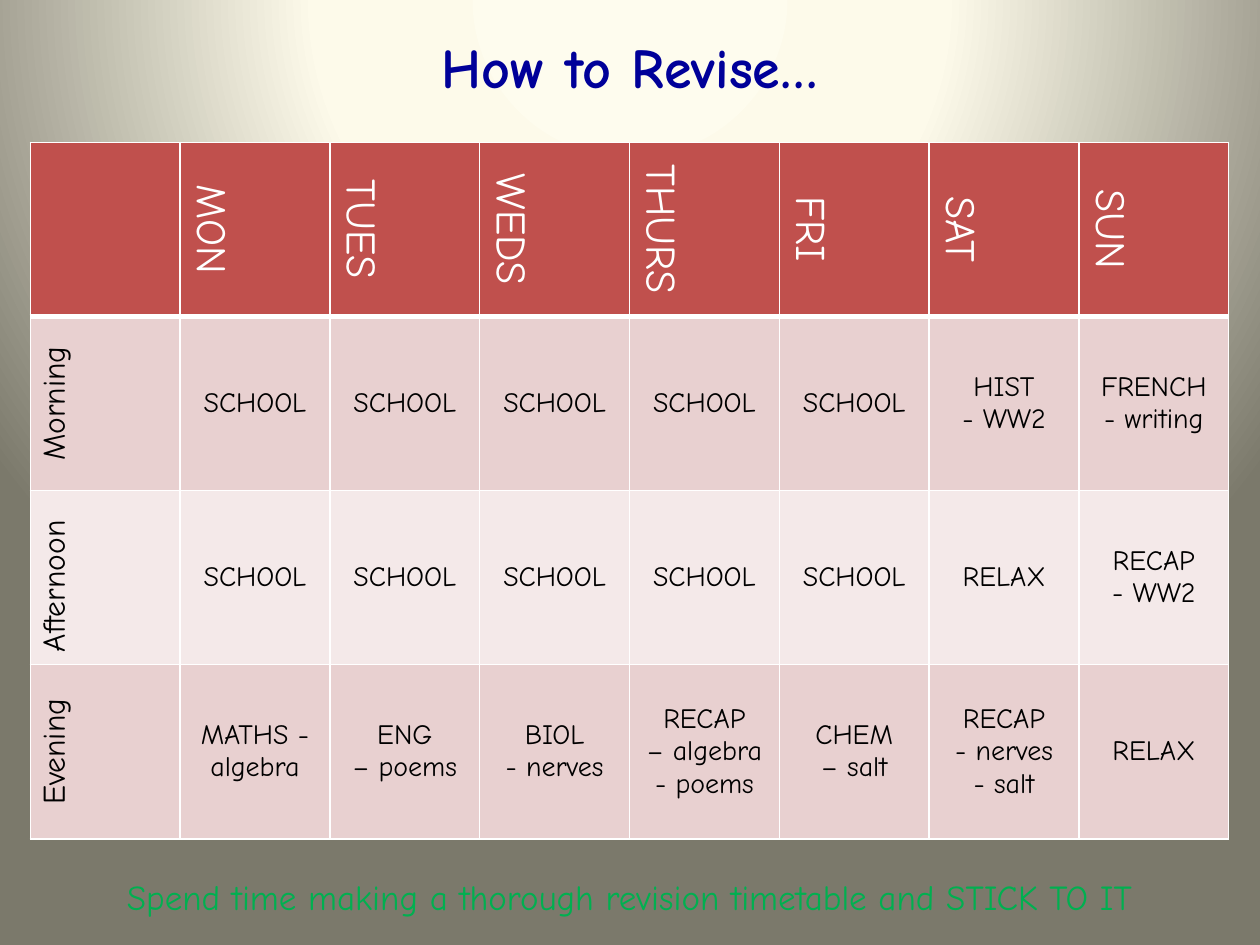
"""Build a one-slide weekly revision timetable."""
from lxml import etree
from pptx import Presentation
from pptx.dml.color import RGBColor
from pptx.enum.text import MSO_ANCHOR, PP_ALIGN
from pptx.oxml.ns import qn
from pptx.util import Cm, Pt

CENTER, LEFT = PP_ALIGN.CENTER, PP_ALIGN.LEFT
MIDDLE = MSO_ANCHOR.MIDDLE
FONT = "Comic Neue"

TITLE = "How to Revise…"
ADVICE = "Spend time making a thorough revision timetable and STICK TO IT"
DAYS = ["", "MON", "TUES", "WEDS", "THURS", "FRI", "SAT", "SUN"]
SCHOOL_WEEK = ["SCHOOL"] * 5
SESSIONS = [
    ["Morning", *SCHOOL_WEEK, "HIST\n- WW2", "FRENCH\n- writing"],
    ["Afternoon", *SCHOOL_WEEK, "RELAX", "RECAP\n- WW2"],
    ["Evening", "MATHS - algebra", "ENG\n– poems", "BIOL\n- nerves",
     "RECAP\n– algebra\n- poems", "CHEM\n– salt",
     "RECAP\n- nerves\n- salt", "RELAX"],
]
HEADER_FILL = "C0504D"
BAND_FILLS = ["E8D0D0", "F4E9E9"]
BACKDROP_STOPS = [(0, "FEFCEE"), (40, "FDFAEA"), (100, "7B796B")]
BACKDROP_FOCUS = {"l": 50, "t": -80, "r": 50, "b": 180}
COLUMN_WIDTH, ROW_HEIGHT = 3.02, 3.51


def rgb(value):
    return RGBColor.from_string(value)


def add_node(parent, tag, **attributes):
    return etree.SubElement(parent, qn(tag), {k: str(v) for k, v in attributes.items()})


def style_text(frame, text, size, color, align=CENTER, bold=False):
    frame.text = text
    for paragraph in frame.paragraphs:
        paragraph.alignment = align
        font = paragraph.font
        font.name, font.size, font.bold = FONT, Pt(size), bold
        font.color.rgb = rgb(color)


def add_caption(slide, box, text, size, color, bold=False):
    frame = slide.shapes.add_textbox(*map(Cm, box)).text_frame
    frame.word_wrap = True
    style_text(frame, text, size, color, bold=bold)


def paint_backdrop(slide):
    slide.background.fill.gradient()
    gradient = slide.element.find(".//" + qn("a:gradFill"))
    for child in list(gradient):
        gradient.remove(child)
    stops = add_node(gradient, "a:gsLst")
    for position, color in BACKDROP_STOPS:
        stop = add_node(stops, "a:gs", pos=position * 1000)
        add_node(stop, "a:srgbClr", val=color)
    circle = add_node(gradient, "a:path", path="circle")
    add_node(circle, "a:fillToRect", **{k: v * 1000 for k, v in BACKDROP_FOCUS.items()})


def style_cell(cell, fill, bottom_width, direction):
    properties = cell._tc.get_or_add_tcPr()
    for side in "LRTB":
        width = bottom_width if side == "B" else 1
        border = add_node(properties, f"a:ln{side}", w=Pt(width))
        add_node(add_node(border, "a:solidFill"), "a:srgbClr", val="FFFFFF")
    if direction:
        properties.set("vert", direction)
    cell.vertical_anchor = MIDDLE
    cell.fill.solid()
    cell.fill.fore_color.rgb = rgb(fill)


def add_timetable(slide):
    rows = [DAYS, *SESSIONS]
    timetable = slide.shapes.add_table(
        len(rows), len(DAYS), Cm(0.61), Cm(2.87),
        Cm(COLUMN_WIDTH * len(DAYS)), Cm(ROW_HEIGHT * len(rows))).table
    for r, entries in enumerate(rows):
        for c, entry in enumerate(entries):
            cell = timetable.cell(r, c)
            if r == 0:
                fill, bottom, size, color = HEADER_FILL, 3, 24, "FFFFFF"
                direction = "vert" if entry else None
            else:
                fill, bottom, color = BAND_FILLS[(r - 1) % 2], 1, "000000"
                size, direction = (18, "vert270") if c == 0 else (16, None)
            style_cell(cell, fill, bottom, direction)
            align = LEFT if entry == "Afternoon" else CENTER
            style_text(cell.text_frame, entry, size, color, align)


def main():
    presentation = Presentation()
    presentation.slide_width, presentation.slide_height = Cm(25.4), Cm(19.05)
    slide = presentation.slides.add_slide(presentation.slide_layouts[6])
    paint_backdrop(slide)
    add_caption(slide, (6.25, 0.53, 12.9, 1.63), TITLE, 32, "000099", bold=True)
    add_timetable(slide)
    add_caption(slide, (0.1, 17.53, 25.2, 1.12), ADVICE, 20, "00B050")
    presentation.save("out.pptx")


if __name__ == "__main__":
    main()
